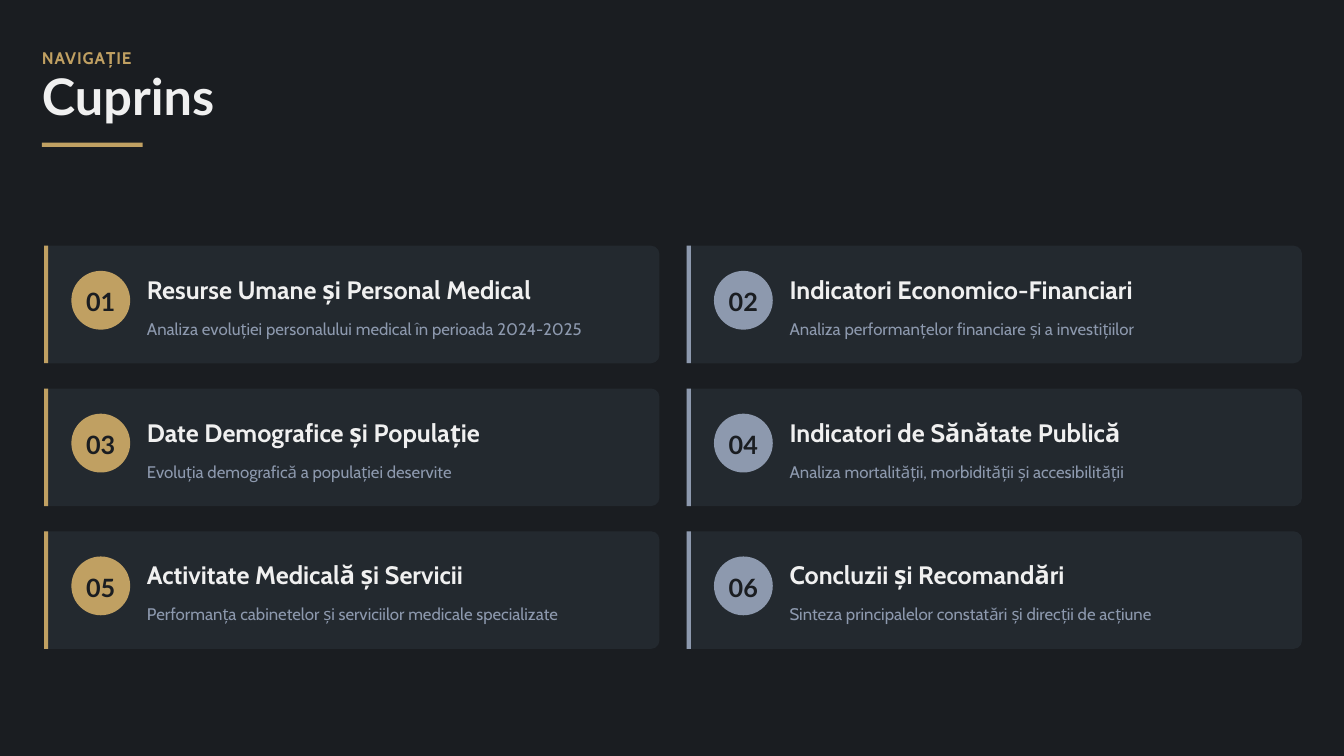
from dataclasses import dataclass

from lxml import etree
from pptx import Presentation
from pptx.dml.color import RGBColor
from pptx.enum.shapes import MSO_SHAPE
from pptx.enum.text import MSO_ANCHOR, MSO_AUTO_SIZE, PP_ALIGN
from pptx.oxml.ns import qn
from pptx.util import Inches, Pt

RECTANGLE = MSO_SHAPE.RECTANGLE
OVAL = MSO_SHAPE.OVAL
ROUNDED_TOP = MSO_SHAPE.ROUND_2_SAME_RECTANGLE
MIDDLE = MSO_ANCHOR.MIDDLE
NO_AUTOFIT = MSO_AUTO_SIZE.NONE
LEFT, CENTER = PP_ALIGN.LEFT, PP_ALIGN.CENTER
TITLE_ONLY = 5

# Grid: 160 columns by 90 rows, each a twelfth of an inch
UNIT = Inches(1 / 12)
COLUMNS, ROWS = 160, 90
MARGIN = 5
CARD_LEFT, CARD_TOP = 5.25, 29.25
CARD_WIDTH, CARD_HEIGHT = 73.25, 14
COLUMN_GAP, ROW_GAP = 3.25, 3
CARD_PADDING = 3
BADGE_SIZE = 7
TEXT_OFFSET, TEXT_WIDTH = 12.25, 54
CORNER = 1
STRIPE = 0.5


@dataclass(frozen=True)
class Theme:
    background: str = "1A1D21"
    light: str = "F0F0F0"
    gold: str = "C0A062"
    slate: str = "8D99AE"
    card: str = "4A5C6A"
    card_opacity: int = 20
    heading_font: str = "Lato"
    body_font: str = "Cabin"
    title_size: int = 36
    heading_size: int = 18
    small_size: int = 12


THEME = Theme()

CHAPTERS = [
    ("Resurse Umane și Personal Medical",
     "Analiza evoluției personalului medical în perioada 2024-2025"),
    ("Indicatori Economico-Financiari",
     "Analiza performanțelor financiare și a investițiilor"),
    ("Date Demografice și Populație",
     "Evoluția demografică a populației deservite"),
    ("Indicatori de Sănătate Publică",
     "Analiza mortalității, morbidității și accesibilității"),
    ("Activitate Medicală și Servicii",
     "Performanța cabinetelor și serviciilor medicale specializate"),
    ("Concluzii și Recomandări",
     "Sinteza principalelor constatări și direcții de acțiune"),
]


def grid(*lengths):
    return [round(length * UNIT) for length in lengths]


def write(shape, text, font, size, color, spacing, bold=True, align=LEFT):
    """Put one styled line of text into a shape and return its run."""
    frame = shape.text_frame
    frame.margin_left = frame.margin_right = 0
    frame.margin_top = frame.margin_bottom = 0
    frame.word_wrap = True
    frame.auto_size = NO_AUTOFIT
    frame.vertical_anchor = MIDDLE
    para = frame.paragraphs[0]
    para.alignment = align
    para.line_spacing = spacing
    span = para.add_run()
    span.text = text
    span.font.name = font
    span.font.size = Pt(size)
    span.font.bold = bold
    span.font.color.rgb = RGBColor.from_string(color)
    return span


def add_text(page, place, *style, **options):
    box = page.shapes.add_textbox(*grid(*place))
    return write(box, *style, **options)


def add_block(page, kind, place, color):
    block = page.shapes.add_shape(kind, *grid(*place))
    block.shadow.inherit = False
    block.fill.solid()
    block.fill.fore_color.rgb = RGBColor.from_string(color)
    block.line.fill.background()
    return block


def add_panel(page, left, top):
    """Card with rounded right corners: a round-top shape turned clockwise."""
    shift = (CARD_WIDTH - CARD_HEIGHT) / 2
    place = (left + shift, top - shift, CARD_HEIGHT, CARD_WIDTH)
    panel = add_block(page, ROUNDED_TOP, place, THEME.card)
    panel.rotation = 90
    panel.adjustments[0] = CORNER / CARD_HEIGHT
    color = panel.fill._xPr.find(qn("a:solidFill"))[0]
    alpha = etree.SubElement(color, qn("a:alpha"))
    alpha.set("val", str(THEME.card_opacity * 1000))


def add_chapter(page, index, heading, summary):
    row, column = divmod(index, 2)
    accent = (THEME.gold, THEME.slate)[column]
    left = CARD_LEFT + column * (CARD_WIDTH + COLUMN_GAP)
    top = CARD_TOP + row * (CARD_HEIGHT + ROW_GAP)
    inner_top = top + CARD_PADDING

    add_panel(page, left, top)
    add_block(page, RECTANGLE, (left, top, STRIPE, CARD_HEIGHT), accent)

    # Numbered badge
    badge = add_block(page, OVAL,
                      (left + 3.25, inner_top, BADGE_SIZE, BADGE_SIZE), accent)
    write(badge, f"{index + 1:02d}", THEME.heading_font, THEME.heading_size,
          THEME.background, 1.1, align=CENTER)

    # Heading and summary
    text_left = left + TEXT_OFFSET
    add_text(page, (text_left, inner_top, TEXT_WIDTH, 4), heading,
             THEME.body_font, THEME.heading_size, THEME.light, 1.1)
    add_text(page, (text_left, inner_top + 5, TEXT_WIDTH, 3), summary,
             THEME.body_font, THEME.small_size, THEME.slate, 1.3, bold=False)


def add_header(page):
    kicker = add_text(page, (MARGIN, 5, 151, 3), "NAVIGAȚIE",
                      THEME.body_font, THEME.small_size, THEME.gold, 1.3)
    kicker._r.get_or_add_rPr().set("spc", "60")

    title = page.shapes.title
    title.left, title.top, title.width, title.height = grid(MARGIN, 9, 153, 6)
    write(title, "Cuprins", THEME.heading_font, THEME.title_size,
          THEME.light, 0.8)
    add_block(page, RECTANGLE, (MARGIN, 17, 12, STRIPE), THEME.gold)


def main():
    deck = Presentation()
    deck.slide_width, deck.slide_height = grid(COLUMNS, ROWS)
    page = deck.slides.add_slide(deck.slide_layouts[TITLE_ONLY])
    page.background.fill.solid()
    page.background.fill.fore_color.rgb = RGBColor.from_string(THEME.background)

    add_header(page)
    for index, (heading, summary) in enumerate(CHAPTERS):
        add_chapter(page, index, heading, summary)
    deck.save("out.pptx")


if __name__ == "__main__":
    main()
